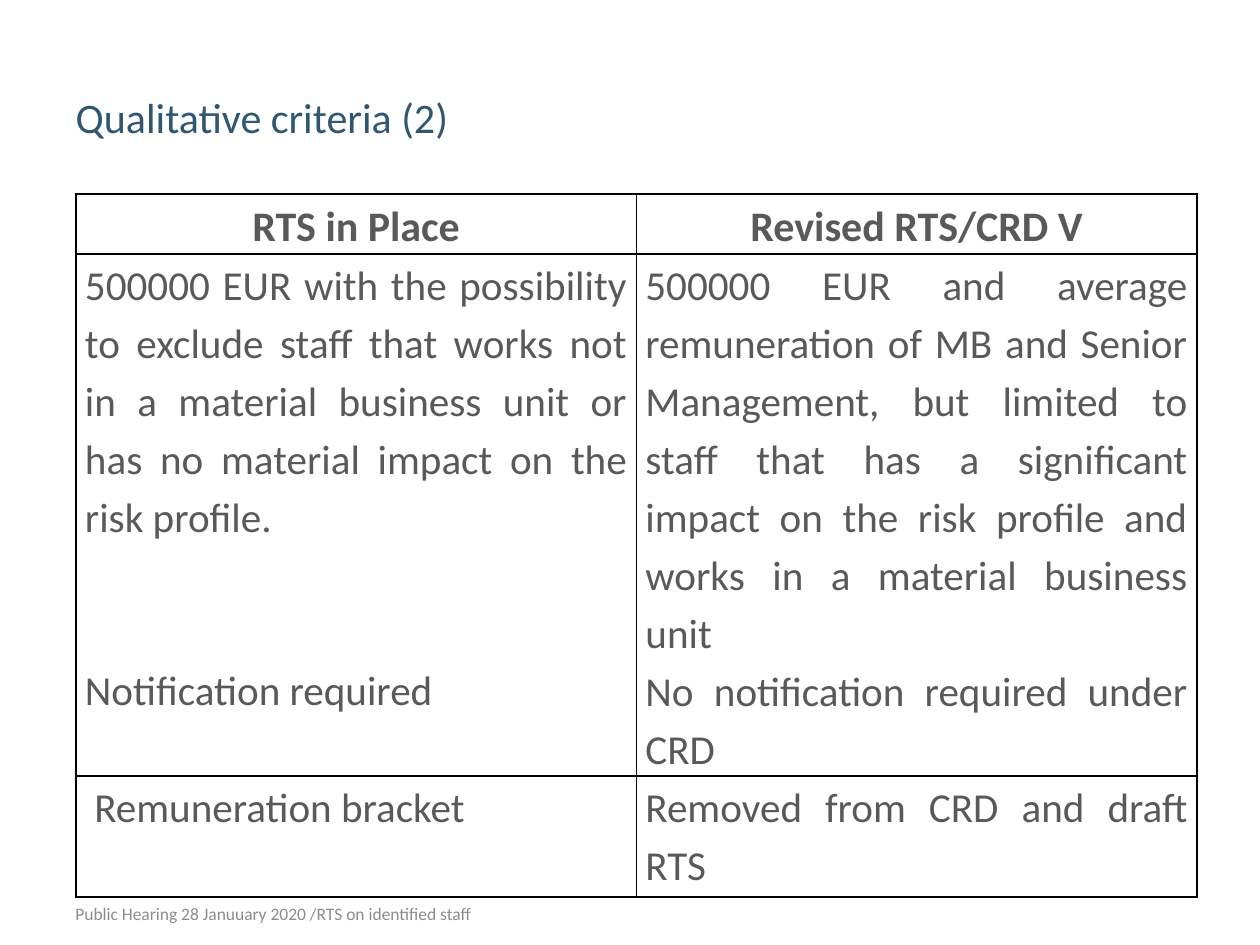
from lxml import etree
from pptx import Presentation
from pptx import util as u
from pptx.dml.color import RGBColor
from pptx.enum import text
from pptx.oxml.ns import qn

PX = u.Inches(1) / 126
FONT = "Calibri"
BODY_SIZE = 23.5
HEADINGS = ["RTS in Place", "Revised RTS/CRD V"]
CRITERIA = [
    [
        [
            "500000 EUR with the possibility to exclude staff that works not in a "
            "material business unit or has no material impact on the risk profile. ",
            "Notification required",
        ],
        [
            "500000 EUR and average remuneration of MB and Senior Management, but "
            "limited to staff that has a significant impact on the risk profile and "
            "works in a material business unit",
            "No notification required under CRD",
        ],
    ],
    [[" Remuneration bracket"], ["Removed from CRD and draft RTS"]],
]


def px(length):
    """Turn pixels into EMU."""
    return u.Emu(round(length * PX))


def color(value):
    """Turn a hex string into a colour."""
    return RGBColor.from_string(value)


def add_run(paragraph, wording, size, ink, bold=False):
    """Add one formatted run to a paragraph."""
    run = paragraph.add_run()
    run.text = wording
    run.font.name = FONT
    run.font.size = u.Pt(size)
    run.font.bold = bold
    run.font.color.rgb = color(ink)


def place_title(slide, left, top, width, height):
    """Place the slide title in its placeholder."""
    title = slide.shapes.title
    title.left, title.top, title.width, title.height = map(px, (left, top, width, height))
    title.text_frame.vertical_anchor = text.MSO_ANCHOR.MIDDLE
    heading = title.text_frame.paragraphs[0]
    heading.alignment = text.PP_ALIGN.LEFT
    add_run(heading, "Qualitative criteria (2)", 24, "2F5773")


def border_cell(cell):
    """Draw a thin black line on every side of a cell."""
    properties = cell._tc.get_or_add_tcPr()
    for index, side in enumerate(("a:lnL", "a:lnR", "a:lnT", "a:lnB")):
        line = etree.Element(qn(side), w=str(u.Pt(1)))
        fill = etree.SubElement(line, qn("a:solidFill"))
        etree.SubElement(fill, qn("a:srgbClr"), val="000000")
        properties.insert(index, line)


def fill_cell(cell, wordings, size, alignment, bold=False, gap=0):
    """Write the paragraphs of a cell, with a gap in points between them."""
    cell.fill.background()
    border_cell(cell)
    cell.margin_left = cell.margin_right = px(9)
    cell.margin_top = cell.margin_bottom = 0
    for index, wording in enumerate(wordings):
        frame = cell.text_frame
        paragraph = frame.add_paragraph() if index else frame.paragraphs[0]
        paragraph.alignment = alignment
        paragraph.line_spacing = 1.15
        paragraph.space_before = u.Pt(gap if index else 0)
        add_run(paragraph, wording, size, "595959", bold)


def place_comparison(slide, left, top, width, row_heights):
    """Place the table that compares the current and the revised RTS."""
    box = map(px, (left, top, width, sum(row_heights)))
    comparison = slide.shapes.add_table(len(row_heights), len(HEADINGS), *box).table
    for row, height in zip(comparison.rows, row_heights):
        row.height = px(height)
    skipped_lines = round(2 * 1.15 * 1.22 * BODY_SIZE)
    for column, heading in enumerate(HEADINGS):
        fill_cell(comparison.cell(0, column), [heading], 24, text.PP_ALIGN.CENTER, bold=True)
        gap = 0 if column else skipped_lines
        for row, criterion in enumerate(CRITERIA, 1):
            fill_cell(comparison.cell(row, column), criterion[column], BODY_SIZE,
                      text.PP_ALIGN.JUSTIFY, gap=gap)


def place_footer(slide, left, top, width, height):
    """Place the line that names the event."""
    frame = slide.shapes.add_textbox(*map(px, (left, top, width, height))).text_frame
    frame.word_wrap = True
    frame.margin_top = frame.margin_bottom = 0
    frame.vertical_anchor = text.MSO_ANCHOR.MIDDLE
    add_run(frame.paragraphs[0],
            "Public Hearing 28 Januuary 2020 /RTS on identified staff", 10, "8C8C8C")


def main():
    """Build the slide and save it."""
    deck = Presentation()
    deck.slide_width, deck.slide_height = px(1260), px(945)
    slide = deck.slides.add_slide(deck.slide_layouts[5])
    place_title(slide, 63, 78, 919, 77)
    place_comparison(slide, 76, 194, 1121, [60, 522, 121])
    place_footer(slide, 63, 898, 678, 30)
    deck.save("out.pptx")


if __name__ == "__main__":
    main()
